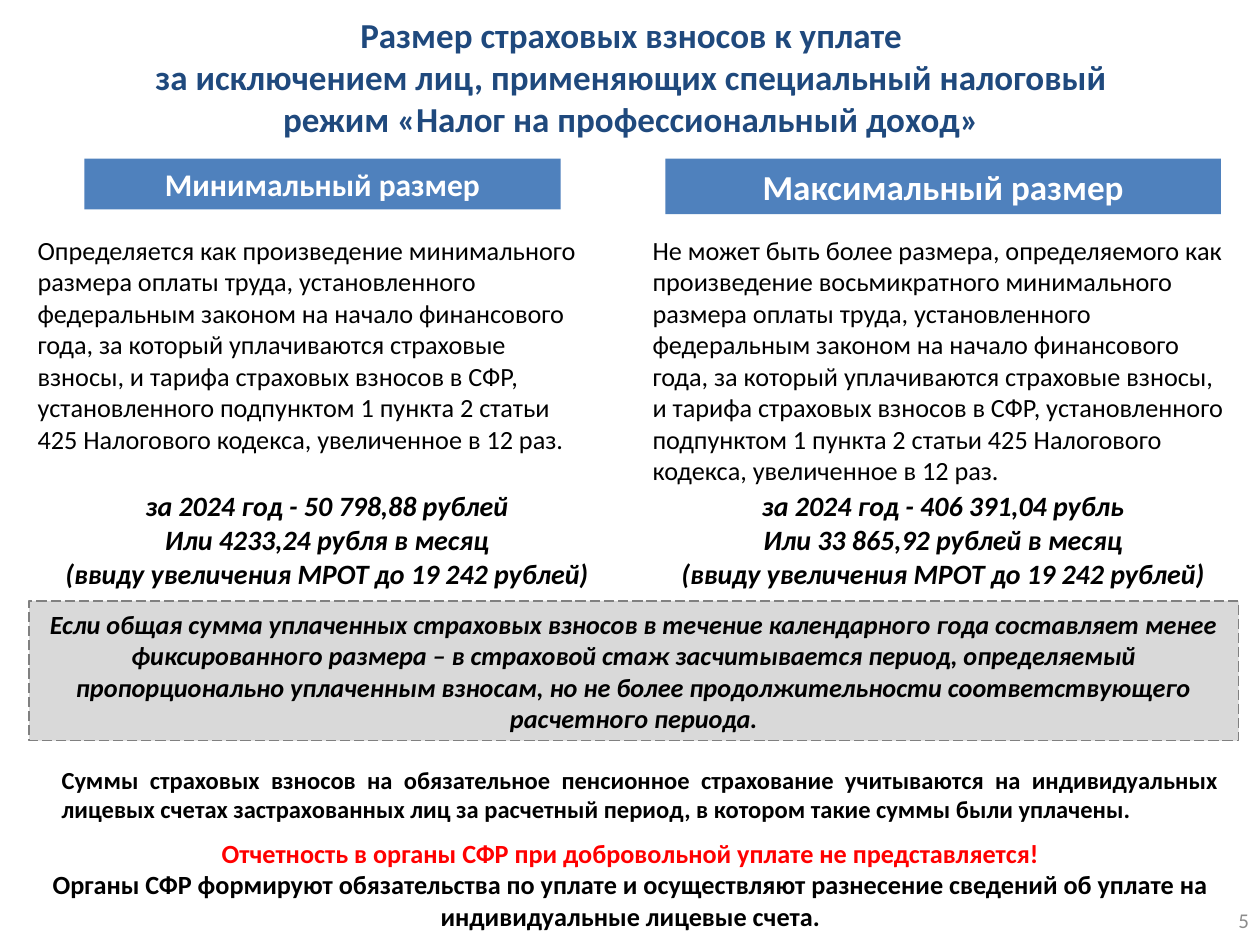
"""Build the slide on minimum and maximum voluntary insurance contributions."""
from dataclasses import dataclass

from pptx import Presentation
from pptx.dml.color import RGBColor
from pptx.enum.dml import MSO_LINE
from pptx.enum.shapes import MSO_SHAPE
from pptx.enum.text import MSO_ANCHOR, MSO_AUTO_SIZE, PP_ALIGN
from pptx.util import Pt

LEFT, CENTER, RIGHT, JUSTIFY = PP_ALIGN.LEFT, PP_ALIGN.CENTER, PP_ALIGN.RIGHT, PP_ALIGN.JUSTIFY
TOP, MIDDLE = MSO_ANCHOR.TOP, MSO_ANCHOR.MIDDLE
RECTANGLE, LONG_DASH, NO_RESIZE = MSO_SHAPE.RECTANGLE, MSO_LINE.LONG_DASH, MSO_AUTO_SIZE.NONE
TITLE_ONLY_LAYOUT = 5


@dataclass(frozen=True)
class Theme:
    """Colours and type sizes of the slide."""
    font: str = "Calibri"
    title: str = "1F497D"
    header: str = "4F81BD"
    panel: str = "D9D9D9"
    border: str = "808080"
    text: str = "000000"
    light: str = "FFFFFF"
    alert: str = "FF0000"
    muted: str = "8C8C8C"
    title_size: int = 20
    header_size: int = 18
    amount_size: int = 16
    body_size: int = 15
    note_size: int = 14
    number_size: int = 12


class SlideBuilder:
    """Add styled elements to one slide."""

    def __init__(self, slide, theme):
        """Keep the slide and its theme."""
        self.slide = slide
        self.theme = theme

    def set_text(self, shape, lines, size, color=None, align=CENTER, anchor=MIDDLE,
                 bold=True, italic=False):
        """Fill a shape with one paragraph per line."""
        frame = shape.text_frame
        frame.text = "\n".join(lines)
        frame.word_wrap = True
        frame.auto_size = NO_RESIZE
        frame.vertical_anchor = anchor
        for paragraph in frame.paragraphs:
            paragraph.alignment = align
            font = paragraph.font
            font.name, font.size = self.theme.font, Pt(size)
            font.bold, font.italic = bold, italic
            font.color.rgb = RGBColor.from_string(color or self.theme.text)
        return shape

    def title(self, box, lines):
        """Place the title placeholder."""
        shape = self.slide.shapes.title
        shape.left, shape.top, shape.width, shape.height = map(Pt, box)
        self.set_text(shape, lines, self.theme.title_size, self.theme.title)

    def text(self, box, lines, size, **style):
        """Add a text box."""
        return self.set_text(self.slide.shapes.add_textbox(*map(Pt, box)), lines, size, **style)

    def panel(self, box, lines, size, fill, border=None, **style):
        """Add a filled rectangle, with a dashed border if one is given."""
        shape = self.slide.shapes.add_shape(RECTANGLE, *map(Pt, box))
        shape.shadow.inherit = False
        shape.fill.solid()
        shape.fill.fore_color.rgb = RGBColor.from_string(fill)
        if border:
            shape.line.color.rgb = RGBColor.from_string(border)
            shape.line.width = Pt(0.75)
            shape.line.dash_style = LONG_DASH
        else:
            shape.line.fill.background()
        return self.set_text(shape, lines, size, **style)

    def column(self, header_box, header, header_size, body_box, body, amount_box, amounts):
        """Add a header, its explanation and the amounts below it."""
        theme = self.theme
        self.panel(header_box, [header], header_size, theme.header, color=theme.light)
        self.text(body_box, [body], theme.body_size, align=LEFT, anchor=TOP, bold=False)
        self.text(amount_box, amounts, theme.amount_size, anchor=TOP, italic=True)


def main():
    """Build and save the presentation."""
    theme = Theme()
    presentation = Presentation()
    presentation.slide_width, presentation.slide_height = Pt(720), Pt(540)
    slide = presentation.slides.add_slide(presentation.slide_layouts[TITLE_ONLY_LAYOUT])
    builder = SlideBuilder(slide, theme)

    builder.title((12.2, 5, 697, 77), [
        "Размер страховых взносов к уплате",
        "за исключением лиц, применяющих специальный налоговый",
        "режим «Налог на профессиональный доход»",
    ])

    basis = (
        "минимального размера оплаты труда, установленного федеральным законом на начало "
        "финансового года, за который уплачиваются страховые взносы, и тарифа страховых "
        "взносов в СФР, установленного подпунктом 1 пункта 2 статьи 425 Налогового кодекса, "
        "увеличенное в 12 раз."
    )
    reason = "(ввиду увеличения МРОТ до 19 242 рублей)"
    builder.column(
        (48.2, 90.7, 272.2, 29), "Минимальный размер", theme.header_size,
        (14.4, 130.3, 328.3, 134.6), f"Определяется как произведение {basis}",
        (16.6, 275.8, 340.6, 65.5),
        ["за 2024 год - 50 798,88 рублей", "Или 4233,24 рубля в месяц", reason],
    )
    builder.column(
        (380.2, 90.7, 317.5, 31.7), "Максимальный размер", theme.title_size,
        (365.8, 130.3, 343.4, 152.6),
        f"Не может быть более размера, определяемого как произведение восьмикратного {basis}",
        (371.5, 275.8, 334.8, 65.5),
        ["за 2024 год - 406 391,04 рубль", "Или 33 865,92 рублей в месяц", reason],
    )

    builder.panel((16.6, 343.4, 691.2, 79.9), [
        "Если общая сумма уплаченных страховых взносов в течение календарного года составляет "
        "менее фиксированного размера – в страховой стаж засчитывается период, определяемый "
        "пропорционально уплаченным взносам, но не более продолжительности соответствующего "
        "расчетного периода.",
    ], theme.body_size, theme.panel, theme.border, italic=True)

    builder.text((28.1, 433.4, 675.4, 41), [
        "Суммы страховых взносов на обязательное пенсионное страхование учитываются на "
        "индивидуальных лицевых счетах застрахованных лиц за расчетный период, в котором "
        "такие суммы были уплачены.",
    ], theme.note_size, align=JUSTIFY, anchor=TOP)

    reporting = builder.text((8.6, 474.5, 703.4, 61.9), [
        "Отчетность в органы СФР при добровольной уплате не представляется!",
        "Органы СФР формируют обязательства по уплате и осуществляют разнесение сведений "
        "об уплате на индивидуальные лицевые счета.",
    ], theme.body_size)
    warning = reporting.text_frame.paragraphs[0]
    warning.font.color.rgb = RGBColor.from_string(theme.alert)

    builder.text((553, 511.2, 167.8, 28.8), ["5"], theme.number_size,
                 color=theme.muted, align=RIGHT, bold=False)
    presentation.save("out.pptx")


if __name__ == "__main__":
    main()
